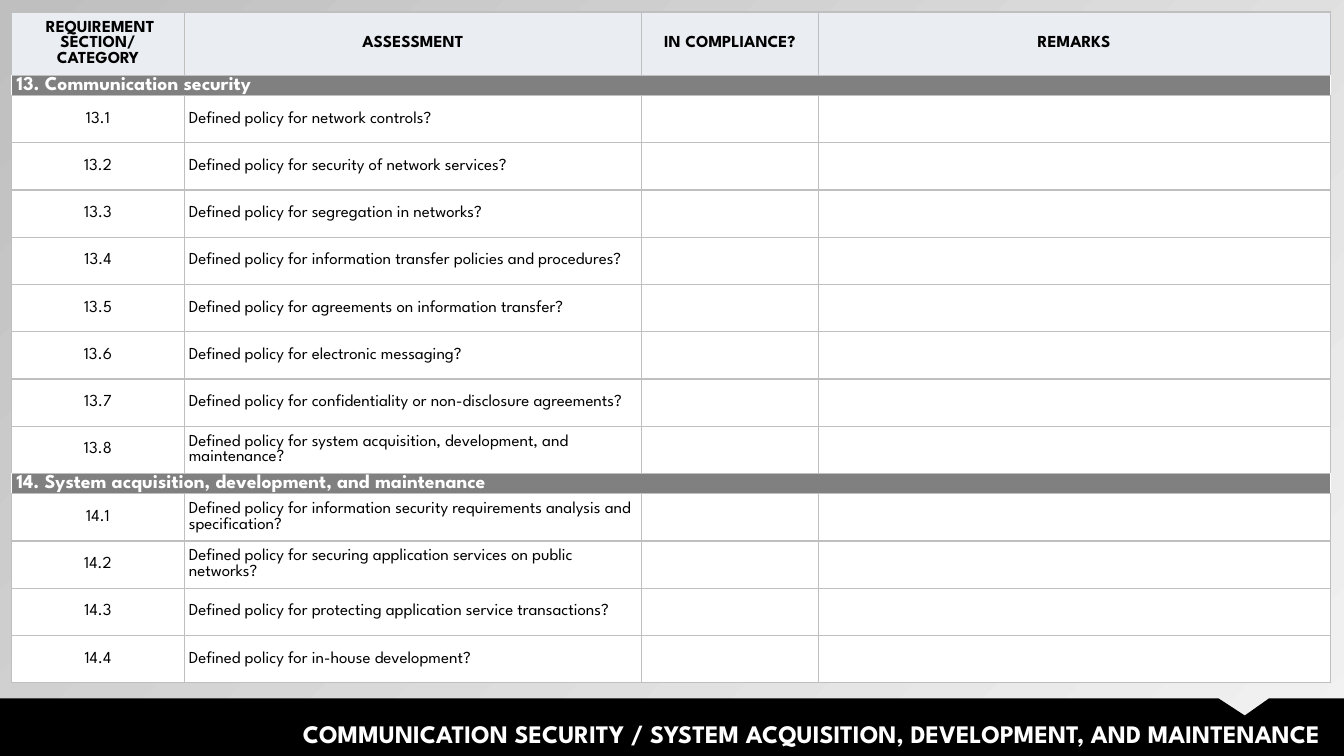
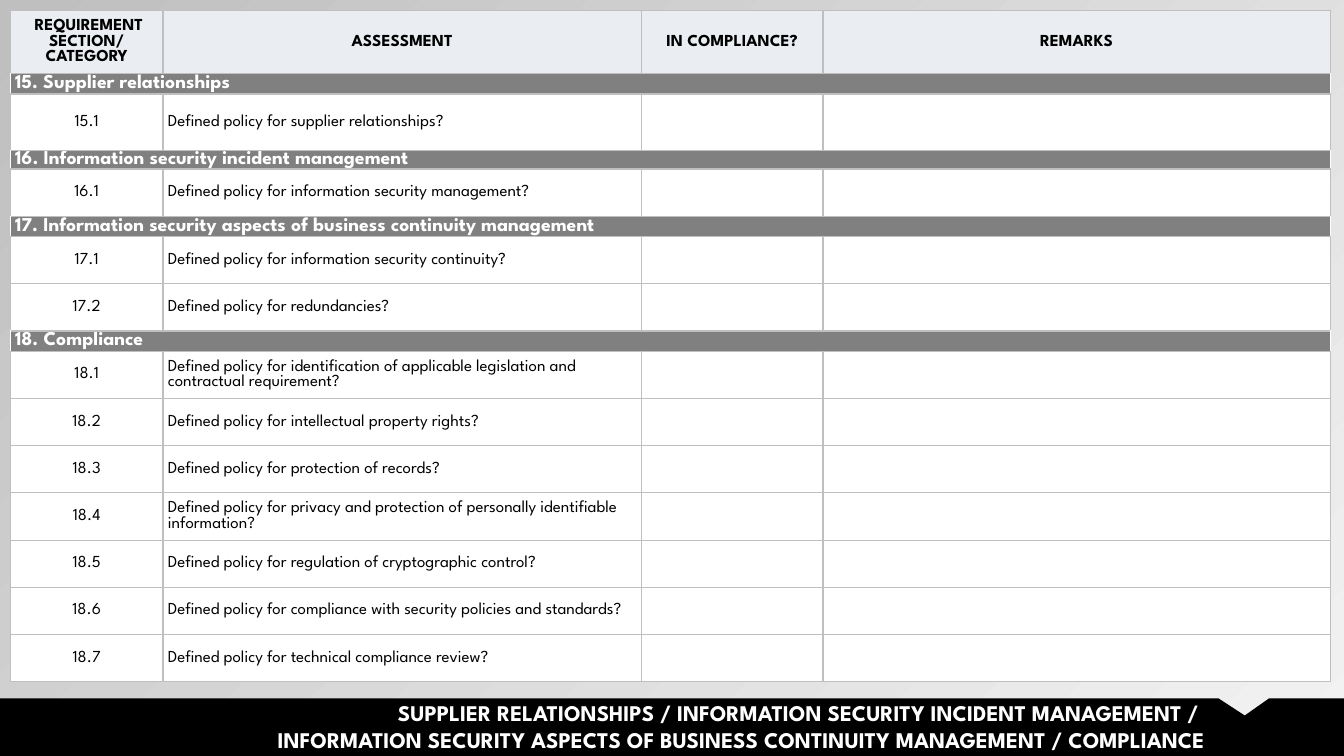
from lxml.etree import SubElement
from pptx import Presentation
from pptx.dml.color import RGBColor
from pptx.enum.text import MSO_ANCHOR, MSO_AUTO_SIZE, PP_ALIGN
from pptx.oxml.ns import qn
from pptx.util import Cm, Pt

COLORS = {
    "header": "EAEEF3",
    "section": "808080",
    "border": "BFBFBF",
    "white": "FFFFFF",
    "black": "000000",
    "glow": "F2F2F2",
    "shade": "BFBFBF",
}
FONT = "League Spartan"
WIDTH, HEIGHT = 33.87, 19.05
HEADINGS = (" REQUIREMENT SECTION/\nCATEGORY", "ASSESSMENT",
            "IN COMPLIANCE?", "REMARKS")

# Font size, weight, text colour and fill of each kind of row
ROW_STYLES = {
    "header": {"size": 12, "bold": True, "color": "black", "fill": "header"},
    "section": {"size": 14, "bold": True, "color": "white", "fill": "section"},
    "item": {"size": 12, "bold": False, "color": "black", "fill": "white"},
}
ROW_HEIGHTS = {"header": 1.6, "section": 0.51, "item": 1.19}
CELL_FORMAT = {
    "margin_left": Cm(0.12), "margin_right": Cm(0.12),
    "margin_top": 0, "margin_bottom": 0,
    "vertical_anchor": MSO_ANCHOR.MIDDLE,
}
TITLE_FORMAT = {
    "word_wrap": True, "auto_size": MSO_AUTO_SIZE.NONE,
    "vertical_anchor": MSO_ANCHOR.TOP,
}

CHECKLISTS = [
    {
        "title": "COMMUNICATION SECURITY / SYSTEM ACQUISITION, DEVELOPMENT, AND MAINTENANCE",
        "title_box": (1.17, 17.98, 32.36, 1.02),
        "title_size": 18,
        "corner": (0.3, 0.3),
        "columns": (4.34, 11.53, 4.45, 12.9),
        "special_heights": {},
        "sections": {
            "13. Communication security": [
                "network controls",
                "security of network services",
                "segregation in networks",
                "information transfer policies and procedures",
                "agreements on information transfer",
                "electronic messaging",
                "confidentiality or non-disclosure agreements",
                "system acquisition, development, and maintenance",
            ],
            "14. System acquisition, development, and maintenance": [
                "information security requirements analysis and specification",
                "securing application services on public networks",
                "protecting application service transactions",
                "in-house development",
            ],
        },
    },
    {
        "title": "SUPPLIER RELATIONSHIPS / INFORMATION SECURITY INCIDENT MANAGEMENT / \n"
                 "INFORMATION SECURITY ASPECTS OF BUSINESS CONTINUITY MANAGEMENT / COMPLIANCE",
        "title_box": (2.77, 17.5, 27.86, 1.63),
        "title_size": 16,
        "corner": (0.26, 0.26),
        "columns": (3.85, 12.05, 4.58, 12.78),
        "special_heights": {2: 1.43, 3: 0.46},
        "sections": {
            "15. Supplier relationships": ["supplier relationships"],
            "16. Information security incident management": [
                "information security management",
            ],
            "17. Information security aspects of business continuity management": [
                "information security continuity",
                "redundancies",
            ],
            "18. Compliance": [
                "identification of applicable legislation and contractual requirement",
                "intellectual property rights",
                "protection of records",
                "privacy and protection of personally identifiable information",
                "regulation of cryptographic control",
                "compliance with security policies and standards",
                "technical compliance review",
            ],
        },
    },
]


def rgb(name):
    return RGBColor.from_string(COLORS[name])


class Deck:
    """Shared style and the slide being built."""

    def __init__(self):
        self.prs = Presentation()
        self.prs.slide_width, self.prs.slide_height = Cm(WIDTH), Cm(HEIGHT)
        self.slide = None

    def add_slide(self):
        self.slide = self.prs.slides.add_slide(self.prs.slide_layouts[5])
        backdrop = self.slide.background.fill
        backdrop.gradient()
        backdrop.gradient_angle = 135
        for stop, name in zip(backdrop.gradient_stops, ("glow", "shade")):
            stop.color.rgb = rgb(name)

    def set_text(self, frame, text, size, bold, color, align):
        frame.text = text
        for paragraph in frame.paragraphs:
            paragraph.alignment = align
            for run in paragraph.runs:
                values = {"name": FONT, "size": Pt(size), "bold": bold}
                for key, value in values.items():
                    setattr(run.font, key, value)
                run.font.color.rgb = rgb(color)

    def add_footer_band(self):
        top, notch_tip = 17.6, 18.03
        outline = [(30.71, top), (31.37, notch_tip), (31.98, top),
                   (WIDTH, top), (WIDTH, HEIGHT), (0, HEIGHT)]
        builder = self.slide.shapes.build_freeform(0, Cm(top))
        builder.add_line_segments([(Cm(x), Cm(y)) for x, y in outline])
        band = builder.convert_to_shape()
        band.shadow.inherit = False
        band.fill.solid()
        band.fill.fore_color.rgb = rgb("black")
        band.line.fill.background()

    def add_title(self, text, box, size):
        title = self.slide.shapes.title
        for key, value in zip(("left", "top", "width", "height"), box):
            setattr(title, key, Cm(value))
        for key, value in TITLE_FORMAT.items():
            setattr(title.text_frame, key, value)
        self.set_text(title.text_frame, text, size, True, "white", PP_ALIGN.RIGHT)
        # Bring the title in front of the footer band
        title.element.getparent().append(title.element)

    def set_borders(self, cell, sides):
        properties = cell._tc.get_or_add_tcPr()
        for side, color in sides.items():
            line = SubElement(properties, qn(f"a:ln{side}"), w=str(Pt(1)))
            fill = SubElement(line, qn("a:solidFill"))
            SubElement(fill, qn("a:srgbClr"), val=COLORS[color])

    def fill_row(self, table, index, kind, texts):
        style = ROW_STYLES[kind]
        last = len(table.columns) - 1
        for column, text in enumerate(texts):
            cell = table.cell(index, column)
            sides = dict.fromkeys("LRTB", "border")
            if kind == "section":
                sides = {"T": "border", "B": "border"}
                if column == 0:
                    sides = {"L": "white", "R": "white", **sides}
                elif column == last:
                    sides = {"R": "white", **sides}
            self.set_borders(cell, sides)
            for key, value in CELL_FORMAT.items():
                setattr(cell, key, value)
            cell.fill.solid()
            cell.fill.fore_color.rgb = rgb(style["fill"])
            centred = kind == "header" or (kind == "item" and column == 0)
            if text:
                self.set_text(cell.text_frame, text, style["size"],
                              style["bold"], style["color"],
                              PP_ALIGN.CENTER if centred else PP_ALIGN.LEFT)
        if kind == "section":
            table.cell(index, 0).merge(table.cell(index, last))

    def add_checklist(self, sections, columns, corner, special_heights):
        # Header, then each section bar followed by its numbered questions
        rows = [("header", HEADINGS)]
        for section, topics in sections.items():
            rows.append(("section", (section, "", "", "")))
            number = section.split(".")[0]
            for position, topic in enumerate(topics, 1):
                rows.append(("item", (f"{number}.{position}",
                                      f"Defined policy for {topic}?", "", "")))
        heights = [special_heights.get(index, ROW_HEIGHTS[kind])
                   for index, (kind, _) in enumerate(rows)]
        left, top = corner
        table = self.slide.shapes.add_table(
            len(rows), len(columns), Cm(left), Cm(top),
            Cm(sum(columns)), Cm(sum(heights))).table
        table.first_row = table.horz_banding = False
        for column, width in zip(table.columns, columns):
            column.width = Cm(width)
        for index, (kind, texts) in enumerate(rows):
            table.rows[index].height = Cm(heights[index])
            self.fill_row(table, index, kind, texts)


def main():
    deck = Deck()
    for checklist in CHECKLISTS:
        deck.add_slide()
        deck.add_checklist(checklist["sections"], checklist["columns"],
                           checklist["corner"], checklist["special_heights"])
        deck.add_footer_band()
        deck.add_title(checklist["title"], checklist["title_box"],
                       checklist["title_size"])
    deck.prs.save("out.pptx")


if __name__ == "__main__":
    main()
